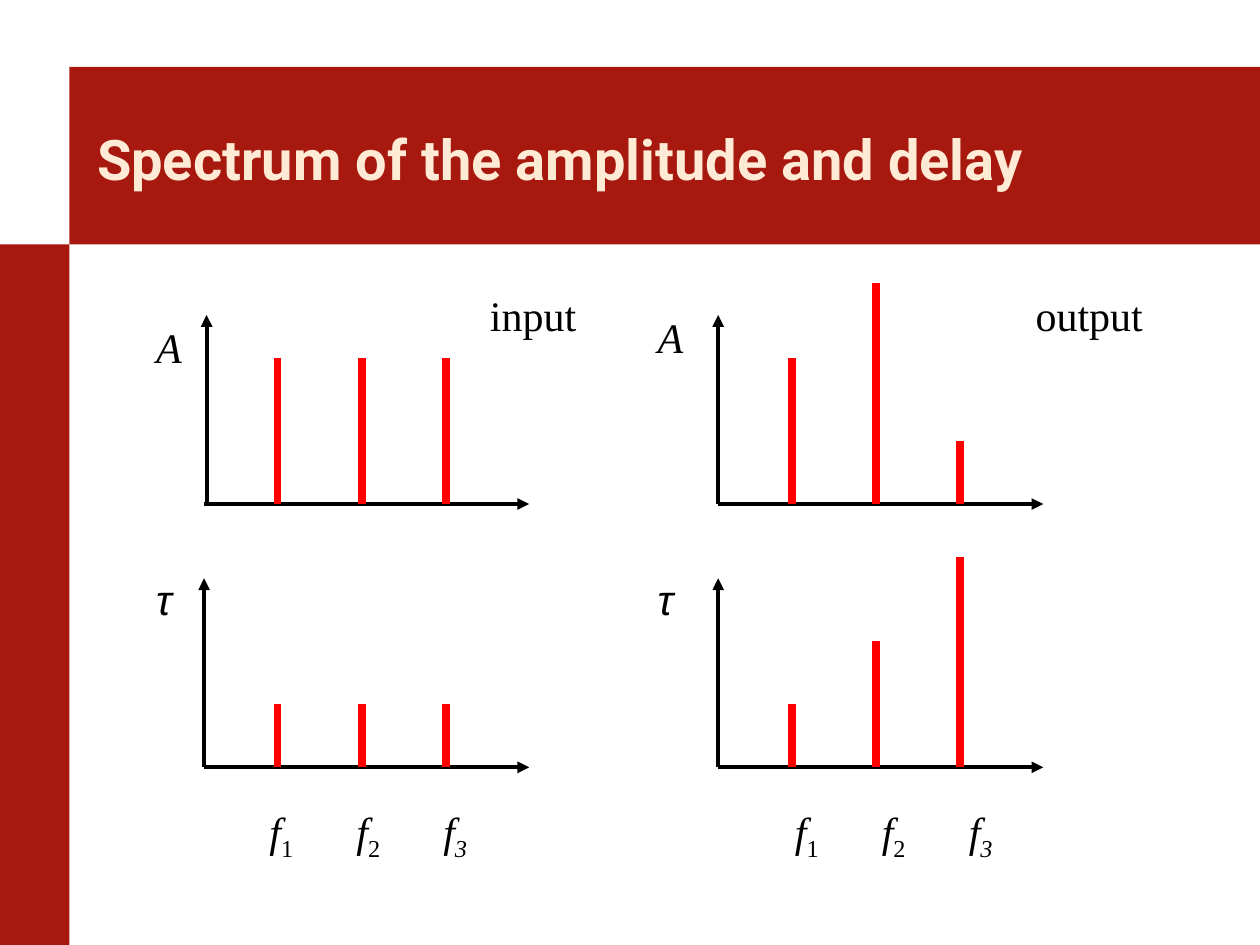
from lxml import etree
from pptx import Presentation
from pptx.dml.color import RGBColor
from pptx.enum.shapes import MSO_CONNECTOR, MSO_SHAPE
from pptx.enum.text import MSO_ANCHOR, MSO_AUTO_SIZE, PP_ALIGN
from pptx.oxml.ns import qn
from pptx.util import Inches, Pt

RECTANGLE, STRAIGHT = MSO_SHAPE.RECTANGLE, MSO_CONNECTOR.STRAIGHT
MIDDLE, LEFT, NO_FIT = MSO_ANCHOR.MIDDLE, PP_ALIGN.LEFT, MSO_AUTO_SIZE.NONE
COLORS = {"band": "A7190E", "title": "FFEBD5", "ink": "000000", "bar": "FF0000"}
WIDTH, HEIGHT = 10, 7.5
BAND_LEFT, BAND_TOP, BAND_BOTTOM = 0.55, 0.53, 1.94
PLOT_WIDTH, PLOT_HEIGHT = 2.58, 1.5
FIRST_BAR, BAR_STEP = 0.226, 0.259
LABEL_HEIGHT = 0.5
SERIF, SANS, HEADING = "Times New Roman", "Arial", "Roboto"
TAB_STOPS = [0.17, 0.86, 1.55]
COLUMNS = [
    {"name": "input", "left": 1.62, "name_left": 3.79, "symbol_left": 1.14,
     "tones_left": 1.87,
     "plots": [{"symbol_top": 2.5, "bars": [0.775] * 3, "shift": 0.02},
               {"symbol_top": 4.5, "bars": [0.333] * 3, "shift": 0}]},
    {"name": "output", "left": 5.7, "name_left": 8.12, "symbol_left": 5.12,
     "tones_left": 6.04,
     "plots": [{"symbol_top": 2.42, "bars": [0.775, 1.167, 0.333], "shift": 0},
               {"symbol_top": 4.5, "bars": [0.333, 0.667, 1.113], "shift": 0}]},
]
ROWS = [{"top": 2.5, "symbol": "A", "font": SERIF},
        {"top": 4.59, "symbol": "τ", "font": SANS}]


def color(name):
    """Return the named colour."""
    return RGBColor.from_string(COLORS[name])


def style(font, tint, **values):
    """Set font attributes and colour."""
    for key, value in values.items():
        setattr(font, key, value)
    font.color.rgb = color(tint)


def add_band(page, box):
    """Draw one solid band of the frame."""
    band = page.shapes.add_shape(RECTANGLE, *map(Inches, box))
    band.shadow.inherit = False
    band.fill.solid()
    band.fill.fore_color.rgb = color("band")
    band.line.fill.background()


def add_header(page, box):
    """Draw the frame and put the title in its band."""
    left, top, width, height = box
    bottom = top + height
    add_band(page, box)
    add_band(page, (0, bottom, left, HEIGHT - bottom))
    title = page.shapes.title
    title.left, title.top = Inches(left + 0.12), Inches(top + 0.16)
    title.width, title.height = Inches(width - 0.24), Inches(height - 0.28)
    frame = title.text_frame
    frame.text = "Spectrum of the amplitude and delay"
    for key, value in {"auto_size": NO_FIT, "word_wrap": True,
                       "vertical_anchor": MIDDLE}.items():
        setattr(frame, key, value)
    para = frame.paragraphs[0]
    para.alignment = LEFT
    style(para.runs[0].font, "title", name=HEADING, size=Pt(32), bold=True)


def add_line(page, start, end, tint, weight, arrow=False):
    """Draw a straight line, with an arrowhead if asked."""
    line = page.shapes.add_connector(STRAIGHT, *map(Inches, (*start, *end)))
    line.line.color.rgb = color(tint)
    line.line.width = Pt(weight)
    if arrow:
        etree.SubElement(line.line._get_or_add_ln(), qn("a:tailEnd"), type="triangle")
    etree.SubElement(line._element.spPr, qn("a:effectLst"))


def add_label(page, box):
    """Add a wrapping text box and return its paragraph."""
    frame = page.shapes.add_textbox(*map(Inches, box)).text_frame
    frame.word_wrap = True
    return frame.paragraphs[0]


def add_span(para, text, font=SERIF, italic=False, subscript=False):
    """Append a run of label text."""
    span = para.add_run()
    span.text = text
    style(span.font, "ink", name=font, size=Pt(24), italic=italic)
    if subscript:
        span._r.get_or_add_rPr().set("baseline", "-25000")


def add_plot(page, box, bars, shift):
    """Draw two axes and bars given as shares of the box height."""
    left, top, width, height = box
    base = top + height
    add_line(page, (left + shift, base), (left + shift, top), "ink", 2.25, True)
    add_line(page, (left, base), (left + width, base), "ink", 2.25, True)
    for index, share in enumerate(bars):
        across = left + width * (FIRST_BAR + BAR_STEP * index)
        add_line(page, (across, base), (across, base - height * share), "bar", 4.5)


def add_tones(page, box):
    """Write the three frequency names at tab stops."""
    para = add_label(page, box)
    tabs = etree.SubElement(para._p.get_or_add_pPr(), qn("a:tabLst"))
    for stop in TAB_STOPS:
        etree.SubElement(tabs, qn("a:tab"), pos=str(Inches(stop)), algn="l")
    for number in "123":
        add_span(para, "\tf", italic=True)
        add_span(para, number, italic=number == "3", subscript=True)


def add_column(page, column):
    """Build one column: name, two plots and frequency names."""
    for row, plot in zip(ROWS, column["plots"]):
        box = (column["left"], row["top"], PLOT_WIDTH, PLOT_HEIGHT)
        add_plot(page, box, plot["bars"], plot["shift"])
        symbol_box = (column["symbol_left"], plot["symbol_top"], 0.42, LABEL_HEIGHT)
        add_span(add_label(page, symbol_box), row["symbol"], row["font"], italic=True)
    name_box = (column["name_left"], 2.25, 1.42, LABEL_HEIGHT)
    add_span(add_label(page, name_box), column["name"])
    add_tones(page, (column["tones_left"], 6.34, PLOT_WIDTH, LABEL_HEIGHT))


def main():
    """Build and save the deck."""
    deck = Presentation()
    deck.slide_width, deck.slide_height = Inches(WIDTH), Inches(HEIGHT)
    page = deck.slides.add_slide(deck.slide_layouts[5])
    add_header(page, (BAND_LEFT, BAND_TOP, WIDTH - BAND_LEFT, BAND_BOTTOM - BAND_TOP))
    title = page.shapes.title._element
    page.shapes._spTree.append(title)
    for column in COLUMNS:
        add_column(page, column)
    deck.save("out.pptx")


if __name__ == "__main__":
    main()
